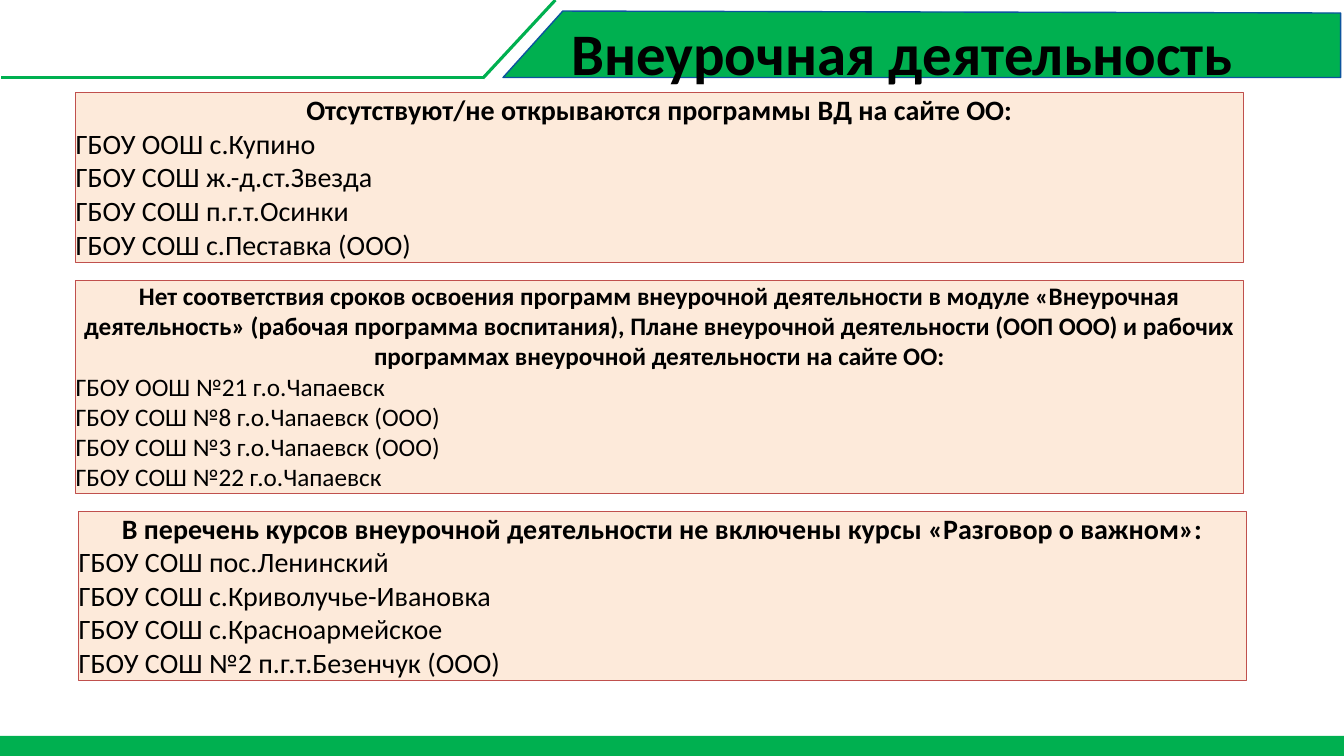
"""Build the slide on extracurricular activities with three framed lists of schools."""
from dataclasses import dataclass

from pptx import Presentation
from pptx.dml.color import RGBColor
from pptx.enum.shapes import MSO_CONNECTOR, MSO_SHAPE
from pptx.enum.text import MSO_ANCHOR, MSO_AUTO_SIZE, PP_ALIGN
from pptx.oxml.ns import qn
from pptx.slide import Slide
from pptx.text.text import TextFrame
from pptx.util import Inches, Pt
from lxml.etree import SubElement

SLIDE_WIDTH, SLIDE_HEIGHT = Inches(40 / 3), Inches(7.5)
COLUMNS, ROWS = 160, 90

Point = tuple[float, float]


@dataclass(frozen=True)
class Theme:
    font: str = "Calibri"
    text: RGBColor = RGBColor(0x00, 0x00, 0x00)
    green: RGBColor = RGBColor(0x00, 0xB0, 0x50)
    banner_edge: RGBColor = RGBColor(0x0C, 0x54, 0x9E)
    panel: RGBColor = RGBColor(0xFD, 0xEA, 0xDA)
    panel_edge: RGBColor = RGBColor(0xC0, 0x50, 0x4D)
    title_size: int = 42
    large_size: int = 20
    small_size: int = 18
    rule_width: float = 2.25
    banner_edge_width: float = 1
    panel_edge_width: float = 0.75


@dataclass(frozen=True)
class Area:
    column: float
    row: float
    columns: float
    rows: float

    def emu(self) -> tuple[int, int, int, int]:
        return (*grid(self.column, self.row), *grid(self.columns, self.rows))


@dataclass(frozen=True)
class Remark:
    area: Area
    size: int
    heading: str
    schools: tuple[str, ...]


THEME = Theme()

TITLE = "Внеурочная деятельность"
TITLE_AREA = Area(68.04, 2.04, 90.96, 8.52)
FOOTER_AREA = Area(0, 87.6, 160, 2.4)
BANNER_CORNERS: list[Point] = [(67, 1.32), (159.6, 1.56), (159.6, 9.24), (59.88, 9.24)]
HEADER_RULES: list[tuple[Point, Point]] = [
    ((66.12, 0), (57.5, 9.3)),
    ((57.6, 9.24), (0.12, 9.24)),
]

REMARKS = [
    Remark(
        Area(9, 11.04, 139, 20.16),
        THEME.large_size,
        "Отсутствуют/не открываются программы ВД на сайте ОО:",
        (
            "ГБОУ ООШ с.Купино",
            "ГБОУ СОШ ж.-д.ст.Звезда",
            "ГБОУ СОШ п.г.т.Осинки",
            "ГБОУ СОШ с.Пеставка (ООО)",
        ),
    ),
    Remark(
        Area(9, 33.36, 139, 25.44),
        THEME.small_size,
        "Нет соответствия сроков освоения программ внеурочной деятельности в модуле "
        "«Внеурочная деятельность» (рабочая программа воспитания), Плане внеурочной "
        "деятельности (ООП ООО) и рабочих программах внеурочной деятельности на сайте ОО:",
        (
            "ГБОУ ООШ №21 г.о.Чапаевск",
            "ГБОУ СОШ №8 г.о.Чапаевск (ООО)",
            "ГБОУ СОШ №3 г.о.Чапаевск (ООО)",
            "ГБОУ СОШ №22 г.о.Чапаевск",
        ),
    ),
    Remark(
        Area(9.36, 60.84, 139, 20.16),
        THEME.large_size,
        "В перечень курсов внеурочной деятельности не включены курсы «Разговор о важном»:",
        (
            "ГБОУ СОШ пос.Ленинский",
            "ГБОУ СОШ с.Криволучье-Ивановка",
            "ГБОУ СОШ с.Красноармейское",
            "ГБОУ СОШ №2 п.г.т.Безенчук (ООО)",
        ),
    ),
]


def grid(column: float, row: float) -> tuple[int, int]:
    return round(column * SLIDE_WIDTH / COLUMNS), round(row * SLIDE_HEIGHT / ROWS)


def prepare_frame(frame: TextFrame) -> None:
    frame.margin_left = frame.margin_top = frame.margin_right = frame.margin_bottom = 0
    frame.word_wrap = True
    frame.auto_size = MSO_AUTO_SIZE.SHAPE_TO_FIT_TEXT
    frame.vertical_anchor = MSO_ANCHOR.TOP


def write_line(frame: TextFrame, index: int, text: str, size: int,
               bold: bool, alignment: PP_ALIGN) -> None:
    paragraph = frame.add_paragraph() if index else frame.paragraphs[0]
    paragraph.text = text
    paragraph.alignment = alignment
    paragraph.font.name = THEME.font
    paragraph.font.size = Pt(size)
    paragraph.font.bold = bold
    paragraph.font.color.rgb = THEME.text


def draw_banner(slide: Slide) -> None:
    start, *corners = [grid(*corner) for corner in BANNER_CORNERS]
    builder = slide.shapes.build_freeform(*start)
    builder.add_line_segments(corners, close=True)
    banner = builder.convert_to_shape()
    banner.shadow.inherit = False
    banner.fill.solid()
    banner.fill.fore_color.rgb = THEME.green
    banner.line.color.rgb = THEME.banner_edge
    banner.line.width = Pt(THEME.banner_edge_width)


def draw_footer(slide: Slide) -> None:
    footer = slide.shapes.add_shape(MSO_SHAPE.RECTANGLE, *FOOTER_AREA.emu())
    footer.shadow.inherit = False
    footer.fill.solid()
    footer.fill.fore_color.rgb = THEME.green
    footer.line.fill.background()


def draw_rule(slide: Slide, start: Point, end: Point) -> None:
    rule = slide.shapes.add_connector(MSO_CONNECTOR.STRAIGHT, *grid(*start), *grid(*end))
    rule.line.color.rgb = THEME.green
    rule.line.width = Pt(THEME.rule_width)
    SubElement(rule._element.spPr, qn("a:effectLst"))


def draw_title(slide: Slide) -> None:
    frame = slide.shapes.add_textbox(*TITLE_AREA.emu()).text_frame
    prepare_frame(frame)
    write_line(frame, 0, TITLE, THEME.title_size, True, PP_ALIGN.LEFT)


def draw_remark(slide: Slide, remark: Remark) -> None:
    panel = slide.shapes.add_shape(MSO_SHAPE.RECTANGLE, *remark.area.emu())
    panel.shadow.inherit = False
    panel.fill.solid()
    panel.fill.fore_color.rgb = THEME.panel
    panel.line.color.rgb = THEME.panel_edge
    panel.line.width = Pt(THEME.panel_edge_width)
    frame = panel.text_frame
    prepare_frame(frame)
    write_line(frame, 0, remark.heading, remark.size, True, PP_ALIGN.CENTER)
    for index, school in enumerate(remark.schools, start=1):
        write_line(frame, index, school, remark.size, False, PP_ALIGN.LEFT)


def main() -> None:
    presentation = Presentation()
    presentation.slide_width, presentation.slide_height = SLIDE_WIDTH, SLIDE_HEIGHT
    slide = presentation.slides.add_slide(presentation.slide_layouts[6])
    draw_banner(slide)
    draw_footer(slide)
    for start, end in HEADER_RULES:
        draw_rule(slide, start, end)
    draw_title(slide)
    for remark in REMARKS:
        draw_remark(slide, remark)
    presentation.save("out.pptx")


if __name__ == "__main__":
    main()
